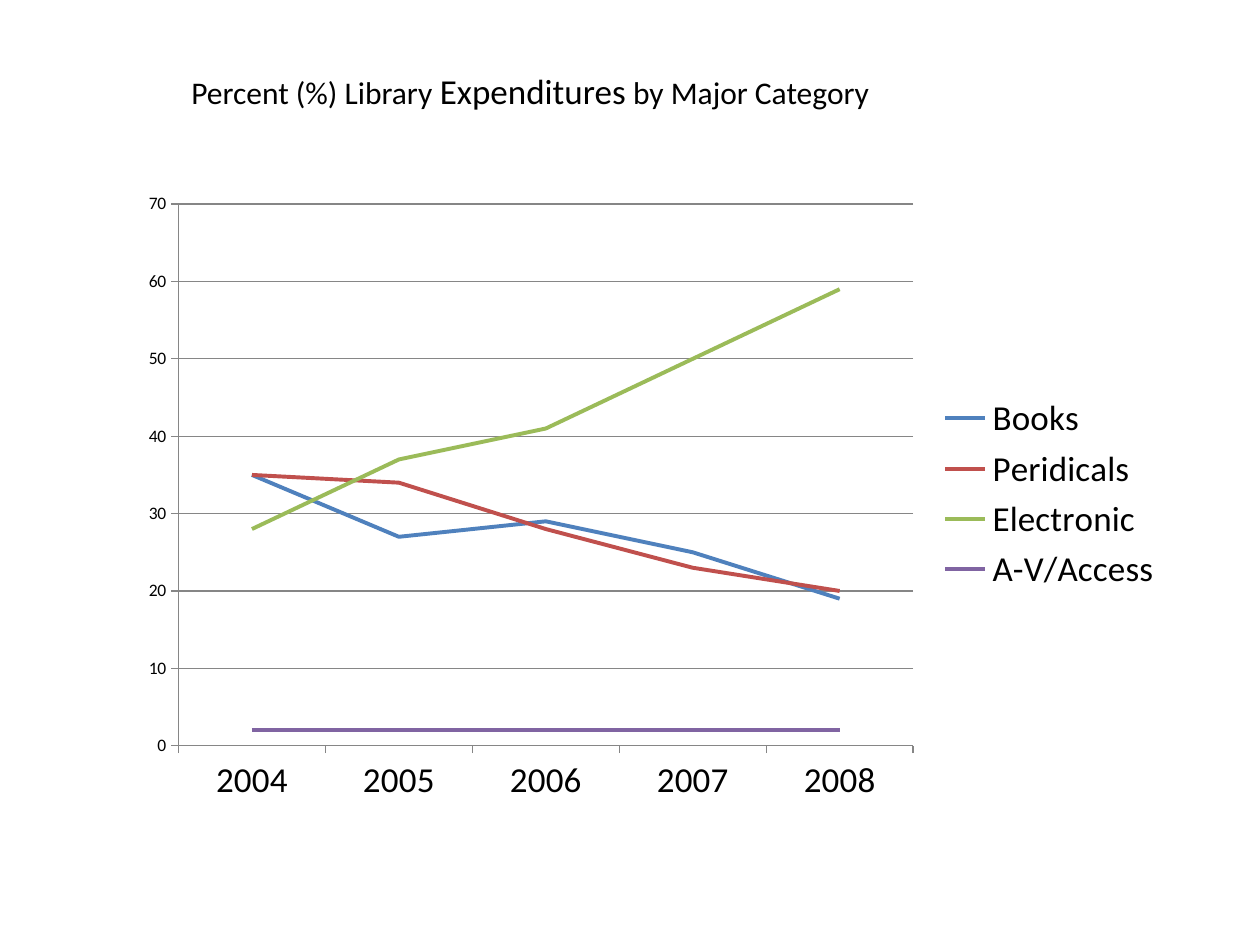
"""Build a slide with a line chart of library expenditures by category."""
import pptx
import pptx.chart.data
import pptx.dml.color
import pptx.enum.chart
import pptx.oxml
import pptx.oxml.ns
import pptx.util
from pptx.util import Inches, Pt

RGB = pptx.dml.color.RGBColor
BLACK = RGB(0x00, 0x00, 0x00)
GRAY = RGB(0x86, 0x86, 0x86)
FONT = "Calibri"

TITLE = [("Percent (%) Library ", 18), ("Expenditures", 20), (" by Major Category", 18)]
YEARS = ["2004", "2005", "2006", "2007", "2008"]
SERIES = [
    ("Books", (35, 27, 29, 25, 19), RGB(0x4F, 0x81, 0xBD)),
    ("Peridicals", (35, 34, 28, 23, 20), RGB(0xC0, 0x50, 0x4D)),
    ("Electronic", (28, 37, 41, 50, 59), RGB(0x9B, 0xBB, 0x59)),
    ("A-V/Access", (2, 2, 2, 2, 2), RGB(0x80, 0x64, 0xA2)),
]
PLOT_AREA = {"x": 0.05, "y": 0.04, "w": 0.7, "h": 0.86}


def style_font(font, size, color=BLACK):
    font.name, font.size, font.bold = FONT, Pt(size), False
    font.color.rgb = color


def add_run(p, text, size=18, color=BLACK):
    r = p.add_run()
    r.text = text
    style_font(r.font, size, color)


def style_line(line, color, width):
    line.color.rgb = color
    line.width = Pt(width)


def set_plot_layout(chart, box):
    plot_area = chart._chartSpace.chart.plotArea
    for old in plot_area.findall(pptx.oxml.ns.qn("c:layout")):
        plot_area.remove(old)
    sizes = "".join(f'<c:{k} val="{v}"/>' for k, v in box.items())
    plot_area.insert(0, pptx.oxml.parse_xml(
        f'<c:layout {pptx.oxml.ns.nsdecls("c")}><c:manualLayout>'
        '<c:layoutTarget val="inner"/><c:xMode val="edge"/><c:yMode val="edge"/>'
        f'{sizes}</c:manualLayout></c:layout>'))


def add_expenditure_chart(s):
    data = pptx.chart.data.CategoryChartData()
    data.categories = YEARS
    for name, values, _ in SERIES:
        data.add_series(name, values)
    chart = s.shapes.add_chart(
        pptx.enum.chart.XL_CHART_TYPE.LINE,
        Inches(1), Inches(1.42), Inches(8.33), Inches(5), data).chart
    style_font(chart.font, 10)
    chart.has_title = False
    chart.has_legend = True
    chart.legend.position = pptx.enum.chart.XL_LEGEND_POSITION.RIGHT
    chart.legend.include_in_layout = False
    style_font(chart.legend.font, 20)
    chart.plots[0].vary_by_categories = False
    for ser, (_, _, color) in zip(chart.plots[0].series, SERIES):
        ser.smooth = False
        ser.marker.style = pptx.enum.chart.XL_MARKER_STYLE.NONE
        style_line(ser.format.line, color, 2.25)
    for axis, size in ((chart.category_axis, 20), (chart.value_axis, 10)):
        axis.major_tick_mark = pptx.enum.chart.XL_TICK_MARK.OUTSIDE
        style_font(axis.tick_labels.font, size)
        style_line(axis.format.line, GRAY, 0.75)
    axis = chart.value_axis
    axis.minimum_scale, axis.maximum_scale, axis.major_unit = 0, 70, 10
    axis.has_major_gridlines = True
    style_line(axis.major_gridlines.format.line, GRAY, 0.75)
    set_plot_layout(chart, PLOT_AREA)


def main():
    prs = pptx.Presentation()
    prs.slide_width, prs.slide_height = Inches(10), Inches(7.5)
    s = prs.slides.add_slide(prs.slide_layouts[6])
    add_expenditure_chart(s)
    tf = s.shapes.add_textbox(Inches(1.42), Inches(0.5), Inches(7.17), Inches(0.44)).text_frame
    tf.word_wrap = True
    for text, size in TITLE:
        add_run(tf.paragraphs[0], text, size=size)
    prs.save("out.pptx")


if __name__ == "__main__":
    main()
